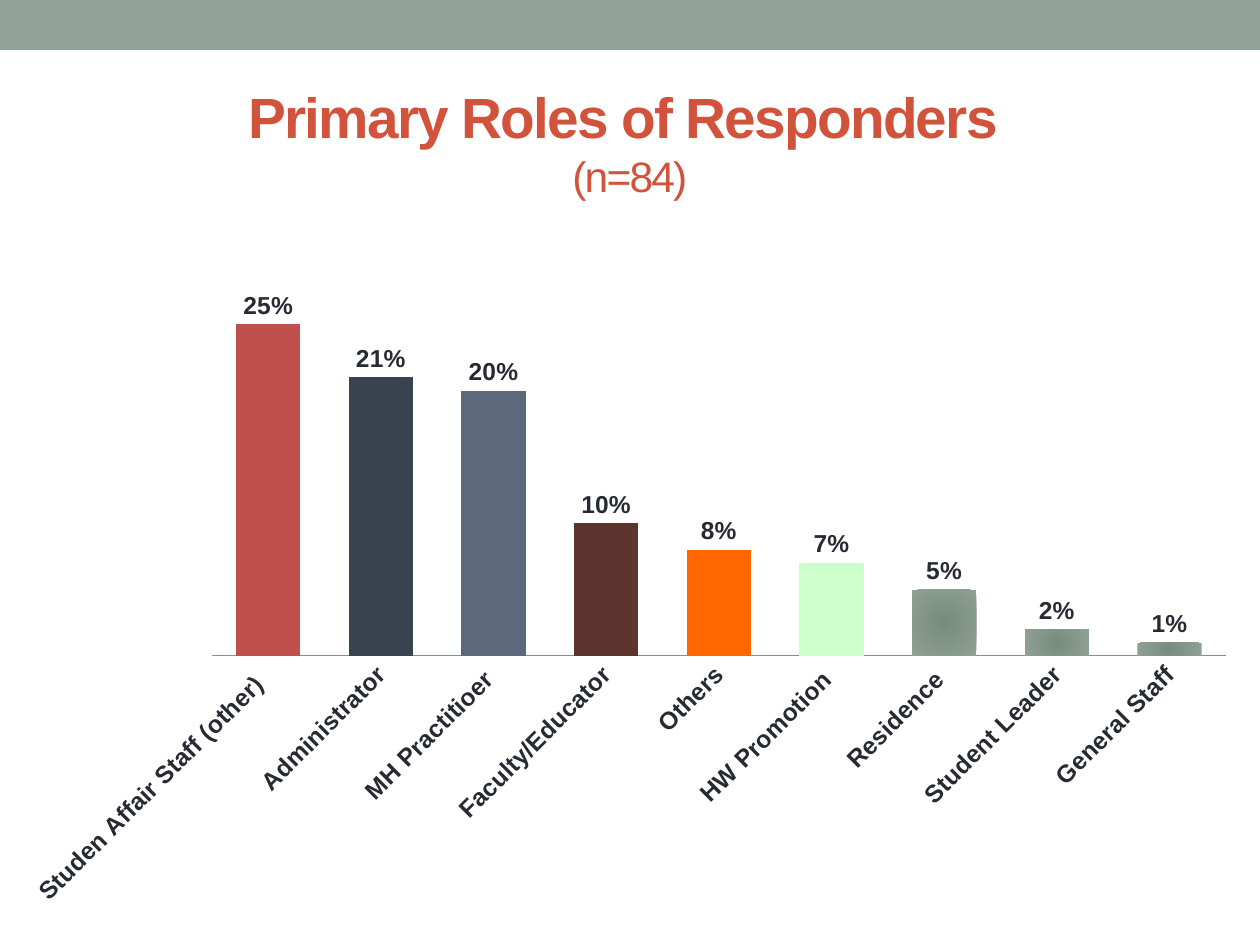
from dataclasses import dataclass

from lxml.etree import SubElement
from pptx import Presentation
from pptx.chart.data import CategoryChartData
from pptx.dml.color import RGBColor
from pptx.enum.chart import XL_CHART_TYPE, XL_LABEL_POSITION, XL_TICK_LABEL_POSITION, XL_TICK_MARK
from pptx.enum.shapes import MSO_SHAPE
from pptx.enum.text import MSO_ANCHOR, MSO_AUTO_SIZE, PP_ALIGN
from pptx.oxml.ns import qn
from pptx.util import Pt

PX = 914400 / 126


@dataclass(frozen=True)
class Theme:
    """Colours and type sizes of the deck."""
    font: str = "Arial"
    band: str = "93A299"
    title: str = "D2533C"
    text: str = "292934"
    axis: str = "8C8C92"
    glow: tuple = ("788B7F", "8FA095")
    bars: tuple = ("C0504D", "394350", "5C697C", "5B352E", "FF6600", "CCFFCC")
    title_size: float = 32.4
    subtitle_size: float = 24.3
    label_size: int = 14
    chart_size: int = 10
    axis_width: float = 0.5


THEME = Theme()
ROLES = {
    "Studen Affair Staff (other)  ": 0.25,
    "Administrator": 0.21,
    "MH Practitioer ": 0.20,
    "Faculty/Educator": 0.10,
    "Others": 0.08,
    "HW Promotion ": 0.07,
    "Residence ": 0.05,
    "Student Leader": 0.02,
    "General Staff": 0.01,
}


def px(length):
    """Turn px into EMU."""
    return round(length * PX)


def apply(target, values):
    """Set each attribute of the target from a dict."""
    for name, value in values.items():
        setattr(target, name, value)


def place(shape, box):
    """Move and size a shape to a px box."""
    apply(shape, dict(zip(("left", "top", "width", "height"), map(px, box))))


def style_font(font, size, color, bold=False):
    """Format a font from the theme."""
    apply(font, {"name": THEME.font, "size": Pt(size), "bold": bold})
    font.color.rgb = RGBColor.from_string(color)


def paint(fill, color):
    """Give a fill one solid colour."""
    fill.solid()
    fill.fore_color.rgb = RGBColor.from_string(color)


def paint_glow(format_, colors):
    """Give a bar a round gradient from its centre outwards."""
    format_.fill.gradient()
    for stop, color in zip(format_.fill.gradient_stops, colors):
        stop.color.rgb = RGBColor.from_string(color)
    gradient = next(format_.fill._xPr.iter(qn("a:gradFill")))
    gradient.remove(gradient.find(qn("a:lin")))
    circle = SubElement(gradient, qn("a:path"), {"path": "circle"})
    SubElement(circle, qn("a:fillToRect"), dict.fromkeys("ltrb", "50000"))


def add_band(page, box):
    """Draw the plain band along the top."""
    band = page.shapes.add_shape(MSO_SHAPE.RECTANGLE, *map(px, box))
    band.shadow.inherit = False
    paint(band.fill, THEME.band)
    band.line.fill.background()


def add_title(page, box):
    """Fill the title placeholder with a heading and a sample size."""
    title = page.shapes.title
    place(title, box)
    apply(title.text_frame, {
        "word_wrap": True,
        "auto_size": MSO_AUTO_SIZE.NONE,
        "vertical_anchor": MSO_ANCHOR.MIDDLE,
    })
    para = title.text_frame.paragraphs[0]
    para.alignment = PP_ALIGN.CENTER
    heading = para.add_run()
    heading.text = "Primary Roles of Responders "
    para.add_line_break()
    sample = para.add_run()
    sample.text = "(n=84)"
    style_font(heading.font, THEME.title_size, THEME.title, True)
    style_font(sample.font, THEME.subtitle_size, THEME.title)
    for span in (heading, sample):
        span.font._element.set("spc", "-100")


def set_plot_box(chart, box, plot_box):
    """Fix the inner plot area at a px box relative to the chart."""
    area = chart._chartSpace.chart.plotArea
    layout = area.find(qn("c:layout"))
    if layout is None:
        layout = area.makeelement(qn("c:layout"))
        area.insert(0, layout)
    manual = SubElement(layout, qn("c:manualLayout"))
    left, top, width, height = plot_box
    settings = {
        "layoutTarget": "inner", "xMode": "edge", "yMode": "edge",
        "x": left / box[2], "y": top / box[3],
        "w": width / box[2], "h": height / box[3],
    }
    for name, value in settings.items():
        SubElement(manual, qn(f"c:{name}"), {"val": str(value)})


def style_axes(chart):
    """Slant the role names and hide the value axis."""
    apply(chart.value_axis, {
        "minimum_scale": 0, "maximum_scale": 0.3,
        "has_major_gridlines": False, "visible": False,
    })
    axis = chart.category_axis
    apply(axis, {
        "major_tick_mark": XL_TICK_MARK.NONE,
        "minor_tick_mark": XL_TICK_MARK.NONE,
        "tick_label_position": XL_TICK_LABEL_POSITION.NEXT_TO_AXIS,
    })
    paint(axis.format.line.fill, THEME.axis)
    axis.format.line.width = Pt(THEME.axis_width)
    style_font(axis.tick_labels.font, THEME.label_size, THEME.text, True)
    axis._element.find(qn("c:txPr")).find(qn("a:bodyPr")).set("rot", "-2700000")


def style_bars(plot):
    """Colour the bars and label them with percentages."""
    apply(plot, {"gap_width": 75, "vary_by_categories": False, "has_data_labels": True})
    apply(plot.data_labels, {
        "show_value": True, "number_format": "0%", "number_format_is_linked": False,
        "position": XL_LABEL_POSITION.OUTSIDE_END,
    })
    style_font(plot.data_labels.font, THEME.label_size, THEME.text, True)
    series = plot.series[0]
    paint(series.format.fill, THEME.band)
    for index in range(len(ROLES)):
        bar = series.points[index].format
        if index < len(THEME.bars):
            paint(bar.fill, THEME.bars[index])
        else:
            paint_glow(bar, THEME.glow)


def add_roles_chart(page, box):
    """Draw the column chart of roles."""
    data = CategoryChartData(number_format="0%")
    data.categories = list(ROLES)
    data.add_series("Series 1", list(ROLES.values()))
    chart = page.shapes.add_chart(XL_CHART_TYPE.COLUMN_CLUSTERED, *map(px, box), data).chart
    apply(chart, {"has_legend": False, "has_title": False})
    style_font(chart.font, THEME.chart_size, THEME.text)
    style_axes(chart)
    style_bars(chart.plots[0])
    set_plot_box(chart, box, (203, 14, 1014, 398))


def main():
    """Build the deck with its one page."""
    deck = Presentation()
    apply(deck, {"slide_width": px(1260), "slide_height": px(945)})
    page = deck.slides.add_slide(deck.slide_layouts[5])
    add_band(page, (0, 0, 1260, 50))
    add_title(page, (63, 73, 1134, 136))
    add_roles_chart(page, (9, 244, 1242, 674))
    deck.save("out.pptx")


if __name__ == "__main__":
    main()
